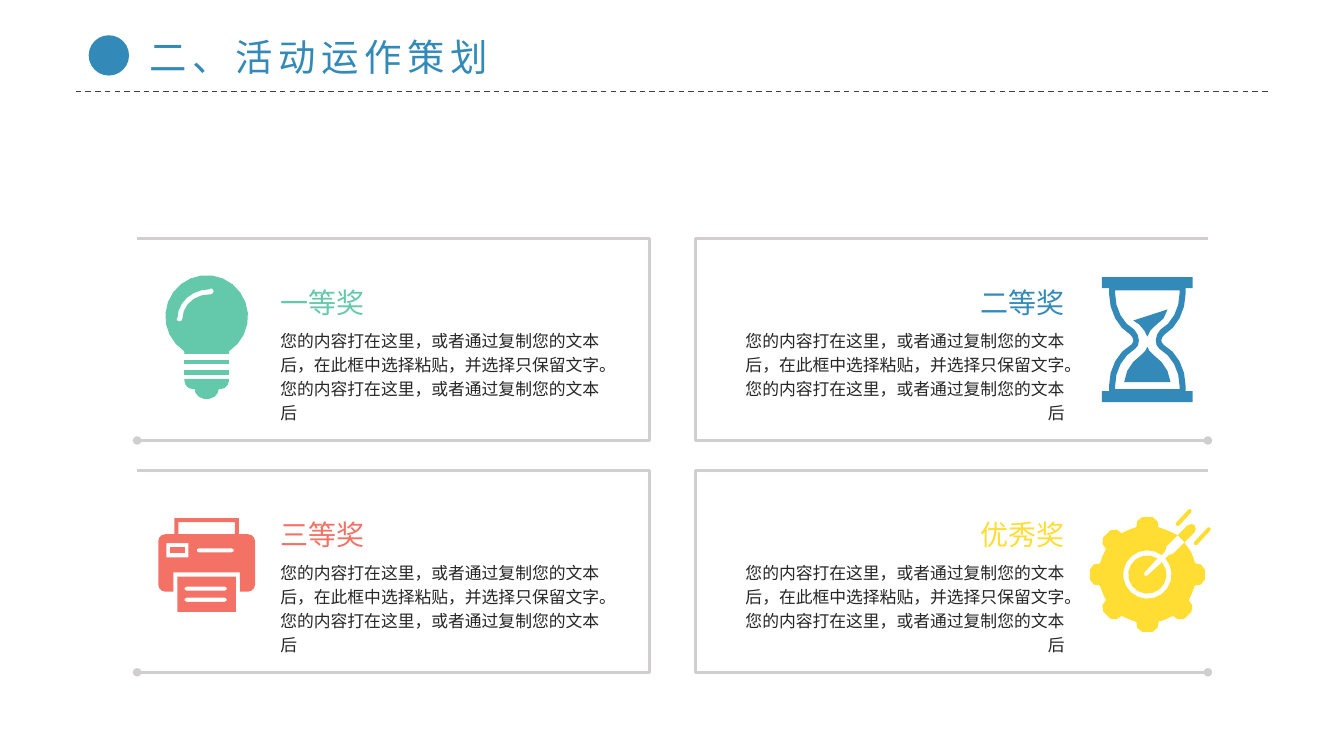
from math import ceil, cos, radians, sin, sqrt

from pptx import Presentation
from pptx.dml.color import RGBColor
from pptx.enum.dml import MSO_LINE
from pptx.enum.shapes import MSO_CONNECTOR, MSO_SHAPE
from pptx.enum.text import MSO_ANCHOR as ANCHOR, MSO_AUTO_SIZE as AUTO_SIZE, PP_ALIGN as ALIGN
from pptx.oxml.ns import qn
from pptx.oxml.xmlchemy import OxmlElement
from pptx.util import Inches, Pt

COLORS = {"blue": "338AB8", "green": "64C9AA", "red": "F37165", "yellow": "FFDD33",
          "text": "262626", "rule": "404040", "frame": "D0CECE"}
TITLE_FONT, BODY_FONT = "Noto Sans CJK JP", "Noto Sans CJK SC"
BODY = ("您的内容打在这里，或者通过复制您的文本后，在此框中选择粘贴，并选择只保留文字。"
        "您的内容打在这里，或者通过复制您的文本后")
GRID_LEFT, GRID_TOP, COLUMN_STEP, ROW_STEP = 1.36, 2.37, 5.54, 2.3
CARD_WIDTH, CARD_HEIGHT, TEXT_INSET = 5.08, 2, 1.42


def color_of(name):
    """Return the named colour of the palette."""
    return RGBColor.from_string(COLORS[name])


def style_paragraph(para, size, font, color, align=ALIGN.LEFT, tracking=0):
    """Format a paragraph, its East Asian font included."""
    para.alignment = align
    para.font.size = Pt(size)
    para.font.name = font
    para.font.color.rgb = color_of(color)
    properties = para._p.pPr.find(qn("a:defRPr"))
    properties.set("spc", str(tracking * 100))
    east_asian = OxmlElement("a:ea")
    east_asian.set("typeface", font)
    properties.append(east_asian)


def arc(x, y, rx, ry, start, end):
    """List points on an elliptical arc, in degrees clockwise from the right."""
    steps = max(2, ceil(abs(end - start) * sqrt(rx) / 10))
    angles = [radians(start + (end - start) * i / steps) for i in range(steps + 1)]
    return [(x + rx * cos(a), y + ry * sin(a)) for a in angles]


def curve(*controls, steps=4):
    """List points on a chain of cubic Bezier segments."""
    points = [controls[0]]
    for i in range(0, len(controls) - 1, 3):
        for t in (n / steps for n in range(1, steps + 1)):
            s = 1 - t
            weights = (s ** 3, 3 * s * s * t, 3 * s * t * t, t ** 3)
            points.append(tuple(sum(w * p[k] for w, p in zip(weights, controls[i:i + 4]))
                                for k in (0, 1)))
    return points


def rectangle(left, top, right, bottom):
    """List the corners of a rectangle."""
    return [(left, top), (right, top), (right, bottom), (left, bottom)]


def capsule(x1, y1, x2, y2, radius, turn=0):
    """List points around a round-ended bar that runs at the given angle."""
    return (arc(x1, y1, radius, radius, turn + 90, turn + 270)
            + arc(x2, y2, radius, radius, turn - 90, turn + 90))


def mirrored(points):
    """Close a right-hand profile with its reflection."""
    return points + [(-x, y) for x, y in reversed(points)]


def outline(shapes, center, contours, closed=True):
    """Draw contours placed around a centre as one freeform."""
    placed = [[(Inches(center[0] + x), Inches(center[1] + y)) for x, y in contour]
              for contour in contours]
    builder = shapes.build_freeform(*placed[0][0], scale=1.0)
    builder.add_line_segments(placed[0][1:], close=closed)
    for contour in placed[1:]:
        builder.move_to(*contour[0])
        builder.add_line_segments(contour[1:], close=closed)
    shape = builder.convert_to_shape()
    shape.shadow.inherit = False
    return shape


def bulb():
    """Describe the light bulb."""
    globe = arc(0, -.23, .41, .41, 123, 417) + [(.22, .14), (-.22, .14)]
    shine = (arc(.03, -.21, .32, .29, 180, 270) + arc(.04, -.48, .03, .03, 270, 450)
             + arc(.03, -.21, .27, .24, 270, 180) + arc(-.27, -.21, .03, .03, 0, 180))
    base = ([(-.22, .39), (.22, .39)] + arc(.14, .41, .08, .08, 0, 90)
            + arc(0, .49, .12, .1, 0, 180) + arc(-.14, .41, .08, .08, 90, 180))
    return [[globe, shine], [rectangle(-.22, .2, .22, .24)],
            [rectangle(-.22, .3, .22, .35)], [base]]


def hourglass():
    """Describe the hourglass."""
    glass = curve((.38, -.46), (.38, -.28), (.29, -.12), (.17, -.05), (.13, -.01),
                  (.13, .02), (.16, .05), (.29, .12), (.38, .28), (.38, .46))
    hollow = curve((.32, -.46), (.32, -.3), (.24, -.16), (.13, -.1), (.07, -.04),
                   (.07, .06), (.12, .09), (.24, .16), (.32, .3), (.32, .46))
    outer = [(.45, -.62), (.45, -.51), (.38, -.51), *glass, (.38, .51), (.45, .51), (.45, .62)]
    upper_sand = [(-.14, -.19), (.2, -.3), (.16, -.21), (.08, -.14), (.03, -.09),
                  (0, -.03), (-.03, -.09), (-.08, -.15)]
    lower_sand = [(0, .07), (.02, .11), (.06, .15), (.14, .22), (.2, .31), (.23, .42)]
    return [[mirrored(outer), mirrored([(.32, -.49), *hollow, (.32, .49)])],
            [upper_sand], [mirrored(lower_sand)]]


def printer():
    """Describe the printer."""
    body = [(.32, -.47), (.32, -.31), *arc(.41, -.24, .07, .07, -90, 0),
            *arc(.41, .19, .07, .07, 0, 90), (.33, .26), (.33, .07)]
    holes = [rectangle(-.28, -.43, .28, -.31), rectangle(-.4, -.22, -.18, -.08),
             capsule(-.08, -.15, .25, -.15, .02)]
    lines = [capsule(-.2, y, .18, y, .02) for y in (.23, .34)]
    return [[mirrored(body), *holes], [rectangle(-.36, -.18, -.22, -.12)],
            [rectangle(-.29, .11, .29, .46), *lines]]


def gear():
    """Describe the target gear with its dart."""
    half_tooth = [(.47, -.11), (.53, -.1), (.57, -.05)]
    tooth = half_tooth + [(u, -v) for u, v in reversed(half_tooth)]
    rim = arc(0, 0, .49, .48, -41, -13)
    for angle in range(0, 271, 45):
        c, s = cos(radians(angle)), sin(radians(angle))
        rim += [(u * c - v * s, u * s + v * c) for u, v in tooth]
        rim.append((.48 * cos(radians(angle + 22.5)), .48 * sin(radians(angle + 22.5))))
    rim += [(.3, -.39), (.19, -.28), (.18, -.24), *arc(0, 0, .24, .24, 307, -42),
            (.21, -.19), (.26, -.21), (.37, -.32)]
    barrel = [(.3, -.39), (.4, -.49), (.44, -.5), (.47, -.49), (.48, -.45), (.47, -.42), (.37, -.32)]
    bullseye = arc(0, 0, .19, .19, -40, 302) + [(-.03, -.02), (-.03, .01), (0, .01)]
    return [[rim, barrel], [bullseye], [capsule(.3, -.5, .42, -.63, .02, -45)],
            [capsule(.48, -.31, .61, -.45, .02, -45)]]


CARDS = [("一等奖", "green", bulb, 1), ("二等奖", "blue", hourglass, 1),
         ("三等奖", "red", printer, .94), ("优秀奖", "yellow", gear, 1.03)]


def add_text(slide, box, text, anchor, **style):
    """Add a wrapped text box without insets."""
    frame = slide.shapes.add_textbox(*map(Inches, box)).text_frame
    frame.word_wrap = True
    frame.vertical_anchor = anchor
    frame.margin_left = frame.margin_right = frame.margin_top = frame.margin_bottom = 0
    para = frame.paragraphs[0]
    para.text = text
    para.line_spacing = 1.2
    style_paragraph(para, **style)


def add_header(slide, left, top, width):
    """Place the title, its dot and the dashed rule below."""
    rule = slide.shapes.add_connector(MSO_CONNECTOR.STRAIGHT, Inches(left), Inches(top + .62),
                                      Inches(left + width), Inches(top + .62))
    rule.line.color.rgb = color_of("rule")
    rule.line.width = Pt(1)
    rule.line.dash_style = MSO_LINE.DASH
    rule._element.spPr.append(OxmlElement("a:effectLst"))
    dot = slide.shapes.add_shape(MSO_SHAPE.OVAL, Inches(left + .13), Inches(top + .06),
                                 Inches(.4), Inches(.4))
    dot.shadow.inherit = False
    dot.fill.solid()
    dot.fill.fore_color.rgb = color_of("blue")
    dot.line.fill.background()
    title = slide.shapes.title
    title.left, title.top, title.width, title.height = map(Inches, (left + .63, top, 3.64, .55))
    title.text_frame.text = "二、活动运作策划"
    title.text_frame.word_wrap = False
    title.text_frame.auto_size = AUTO_SIZE.NONE
    style_paragraph(title.text_frame.paragraphs[0], 26.7, TITLE_FONT, "blue", tracking=4)


def add_card(slide, left, top, on_right, name, color, icon, icon_y):
    """Place one prize card, open towards the outer edge of the slide."""
    outer, inner = (CARD_WIDTH, 0) if on_right else (0, CARD_WIDTH)
    corners = [(outer, CARD_HEIGHT), (inner, CARD_HEIGHT), (inner, 0), (outer, 0)]
    frame = outline(slide.shapes, (left, top), [corners], closed=False)
    frame.fill.background()
    frame.line.color.rgb = color_of("frame")
    frame.line.width = Pt(2)
    head = OxmlElement("a:headEnd")
    head.set("type", "oval")
    frame.line._get_or_add_ln().append(head)

    align = ALIGN.RIGHT if on_right else ALIGN.LEFT
    for text, y, width, height, anchor, size, font, tint in (
            (BODY, .87, 3.28, .77, ANCHOR.TOP, 12, BODY_FONT, "text"),
            (name, .38, 2.76, .44, ANCHOR.MIDDLE, 20, TITLE_FONT, color)):
        x = CARD_WIDTH - TEXT_INSET - width if on_right else TEXT_INSET
        add_text(slide, (left + x, top + y, width, height), text, anchor,
                 size=size, font=font, color=tint, align=align)

    center = (left + (CARD_WIDTH - .6 if on_right else .69), top + icon_y)
    group = slide.shapes.add_group_shape()
    for contours in icon():
        part = outline(group.shapes, center, contours)
        part.fill.solid()
        part.fill.fore_color.rgb = color_of(color)
        part.line.fill.background()


def main():
    """Build the prize slide and save the deck."""
    deck = Presentation()
    deck.slide_width, deck.slide_height = Inches(13.33), Inches(7.5)
    slide = deck.slides.add_slide(deck.slide_layouts[5])
    add_header(slide, .75, .29, 11.83)
    for index, card in enumerate(CARDS):
        row, column = divmod(index, 2)
        add_card(slide, GRID_LEFT + column * COLUMN_STEP, GRID_TOP + row * ROW_STEP,
                 column == 1, *card)
    deck.save("out.pptx")


if __name__ == "__main__":
    main()
